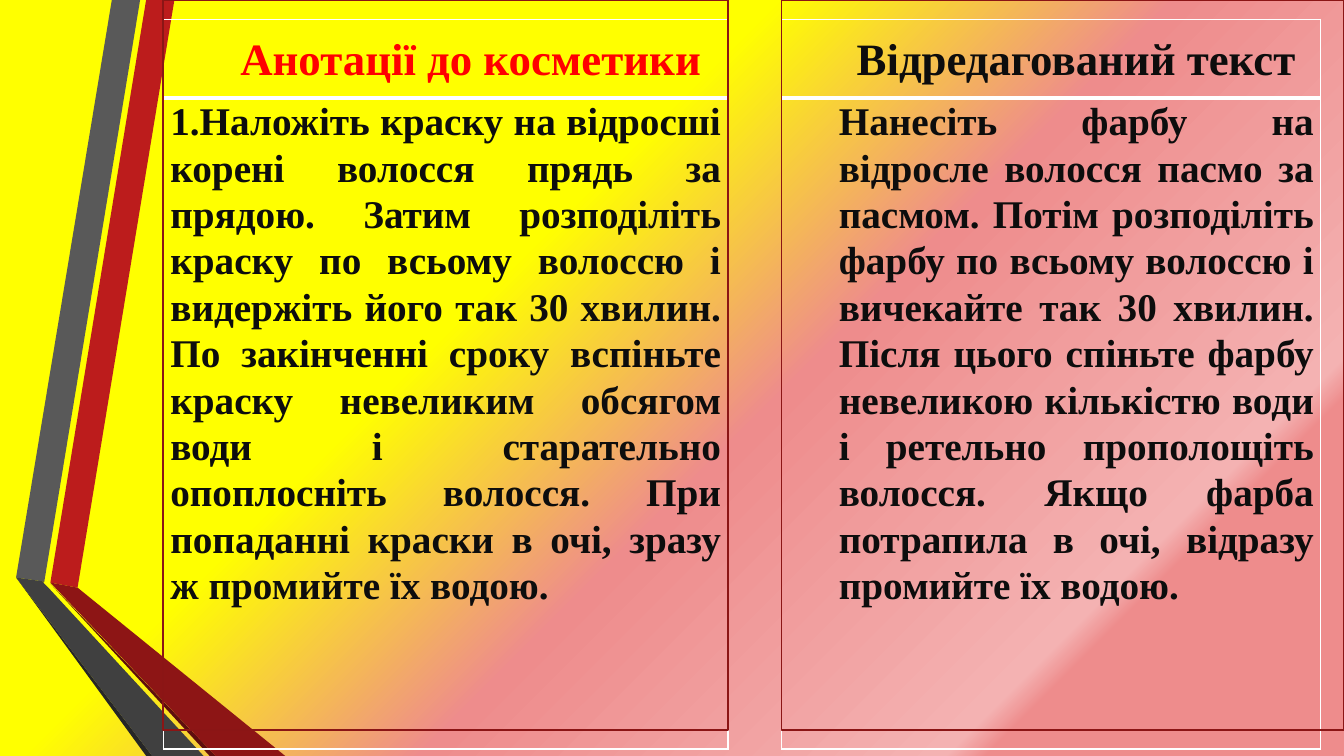
from dataclasses import dataclass

from lxml import etree
from pptx import Presentation, util as u
from pptx.dml.color import RGBColor
from pptx.enum import shapes, text
from pptx.oxml.ns import qn

CELL = u.Inches(0.01)  # the slide is a grid of 1333 columns by 750 rows
COLS, ROWS = 1333, 750
PANEL_ROWS, TABLE_TOP, HEAD_ROWS = 724, 19, 78
INK, WHITE, FRAME = "0D0D0D", "FFFFFF", "8B1515"
FONT = {"name": "Times New Roman", "bold": True}
STOPS = [(37, "FFFF00"), (56, "EE8C8C"), (81, "F4B2B2"), (83, "EE8C8C")]


@dataclass
class Band:
    color: str
    points: list[tuple[int, int]]


@dataclass
class Panel:
    left: int
    table_cols: int
    frame_cols: int
    title: str
    title_color: str
    body: str
    body_indent: int


BANDS = [
    Band("BC1C1C", [(50, 578), (77, 583), (173, 0), (145, 0)]),
    Band("595959", [(139, 0), (111, 0), (16, 573), (44, 577)]),
    Band("262626", [(16, 573), (145, 750), (151, 750)]),
    Band("5E0E0E", [(50, 579), (208, 750), (214, 750)]),
    Band("8D1515", [(50, 578), (214, 750), (283, 750), (77, 583)]),
    Band("404040", [(202, 750), (48, 583), (43, 578), (44, 577), (16, 573), (151, 750)]),
]

PANELS = [
    Panel(162, 560, 560, "Анотації до косметики", "FF0000",
          "1.Наложіть краску на відросші корені волосся прядь за прядою. Затим "
          "розподіліть краску по всьому волоссю і видержіть його так 30 хвилин. "
          "По закінченні сроку вспіньте краску невеликим обсягом води і старательно "
          "опоплосніть волосся. При попаданні краски в очі, зразу ж промийте їх водою.", 0),
    Panel(775, 535, 558, "Відредагований текст", INK,
          "Нанесіть фарбу на відросле волосся пасмо за пасмом. Потім розподіліть "
          "фарбу по всьому волоссю і вичекайте так 30 хвилин. Після цього спіньте "
          "фарбу невеликою кількістю води і ретельно прополощіть волосся. Якщо фарба "
          "потрапила в очі, відразу промийте їх водою.", 50),
]


def rgb(color: str) -> RGBColor:
    return RGBColor.from_string(color)


def span(*cells: int) -> list[int]:
    return [n * CELL for n in cells]


def set_all(obj, values: dict) -> None:
    for name, value in values.items():
        setattr(obj, name, value)


def paint_background(s) -> None:
    fill = s.background.fill
    fill.gradient()
    grad = s._element.find(".//" + qn("a:gradFill"))
    stops = grad.find(qn("a:gsLst"))
    for old in list(stops):
        stops.remove(old)
    for pos, color in STOPS:
        gs = etree.SubElement(stops, qn("a:gs"), pos=str(pos * 1000))
        etree.SubElement(gs, qn("a:srgbClr"), val=color)
    fill.gradient_angle = 315  # counter-clockwise: towards the lower right


def draw_band(s, band: Band) -> None:
    builder = s.shapes.build_freeform(*band.points[0], scale=CELL)
    builder.add_line_segments(band.points[1:], close=True)
    sp = builder.convert_to_shape()
    sp.shadow.inherit = False
    sp.fill.solid()
    sp.fill.fore_color.rgb = rgb(band.color)
    sp.line.fill.background()


def add_borders(cell, widths: dict[str, int]) -> None:
    """Draw white cell borders; widths maps a side (L, R, T, B) to points."""
    tc_pr = cell._tc.get_or_add_tcPr()
    for i, (side, width) in enumerate(widths.items()):
        ln = etree.Element(qn("a:ln" + side), w=str(u.Pt(width)))
        solid = etree.SubElement(ln, qn("a:solidFill"))
        etree.SubElement(solid, qn("a:srgbClr"), val=WHITE)
        tc_pr.insert(i, ln)


def write_cell(cell, words: str, size: int, color: str, align, anchor, indent: int) -> None:
    cell.fill.background()
    set_all(cell, {"margin_left": 7 * CELL, "margin_right": 7 * CELL, "margin_top": 0,
                   "margin_bottom": 0, "vertical_anchor": anchor})
    p = cell.text_frame.paragraphs[0]
    set_all(p, {"alignment": align, "line_spacing": 1.07})
    p._p.get_or_add_pPr().set("marL", str(indent * CELL))
    r = p.add_run()
    r.text = words
    set_all(r.font, FONT | {"size": u.Pt(size)})
    r.font.color.rgb = rgb(color)


def draw_table(s, panel: Panel) -> None:
    box = span(panel.left, TABLE_TOP, panel.table_cols, PANEL_ROWS)
    table = s.shapes.add_table(2, 1, *box).table
    set_all(table, {"first_row": False, "horz_banding": False})
    table.rows[0].height, table.rows[1].height = span(HEAD_ROWS, PANEL_ROWS - HEAD_ROWS)
    head, body = table.cell(0, 0), table.cell(1, 0)
    write_cell(head, panel.title, 32, panel.title_color, text.PP_ALIGN.CENTER,
               text.MSO_ANCHOR.MIDDLE, 50)
    write_cell(body, panel.body, 28, INK, text.PP_ALIGN.JUSTIFY,
               text.MSO_ANCHOR.TOP, panel.body_indent)
    add_borders(head, {"L": 1, "R": 1, "T": 1, "B": 3})
    add_borders(body, {"L": 1, "R": 1, "T": 3, "B": 1})


def draw_frame(s, panel: Panel) -> None:
    box = span(panel.left, 0, panel.frame_cols, PANEL_ROWS)
    sp = s.shapes.add_shape(shapes.MSO_SHAPE.RECTANGLE, *box)
    sp.shadow.inherit = False
    sp.fill.background()
    sp.line.color.rgb = rgb(FRAME)
    sp.line.width = u.Pt(1.25)


def main() -> None:
    prs = Presentation()
    prs.slide_width, prs.slide_height = span(COLS, ROWS)
    s = prs.slides.add_slide(prs.slide_layouts[6])
    paint_background(s)
    for band in BANDS:
        draw_band(s, band)
    for draw in (draw_table, draw_frame):
        for panel in PANELS:
            draw(s, panel)
    prs.save("out.pptx")


if __name__ == "__main__":
    main()
